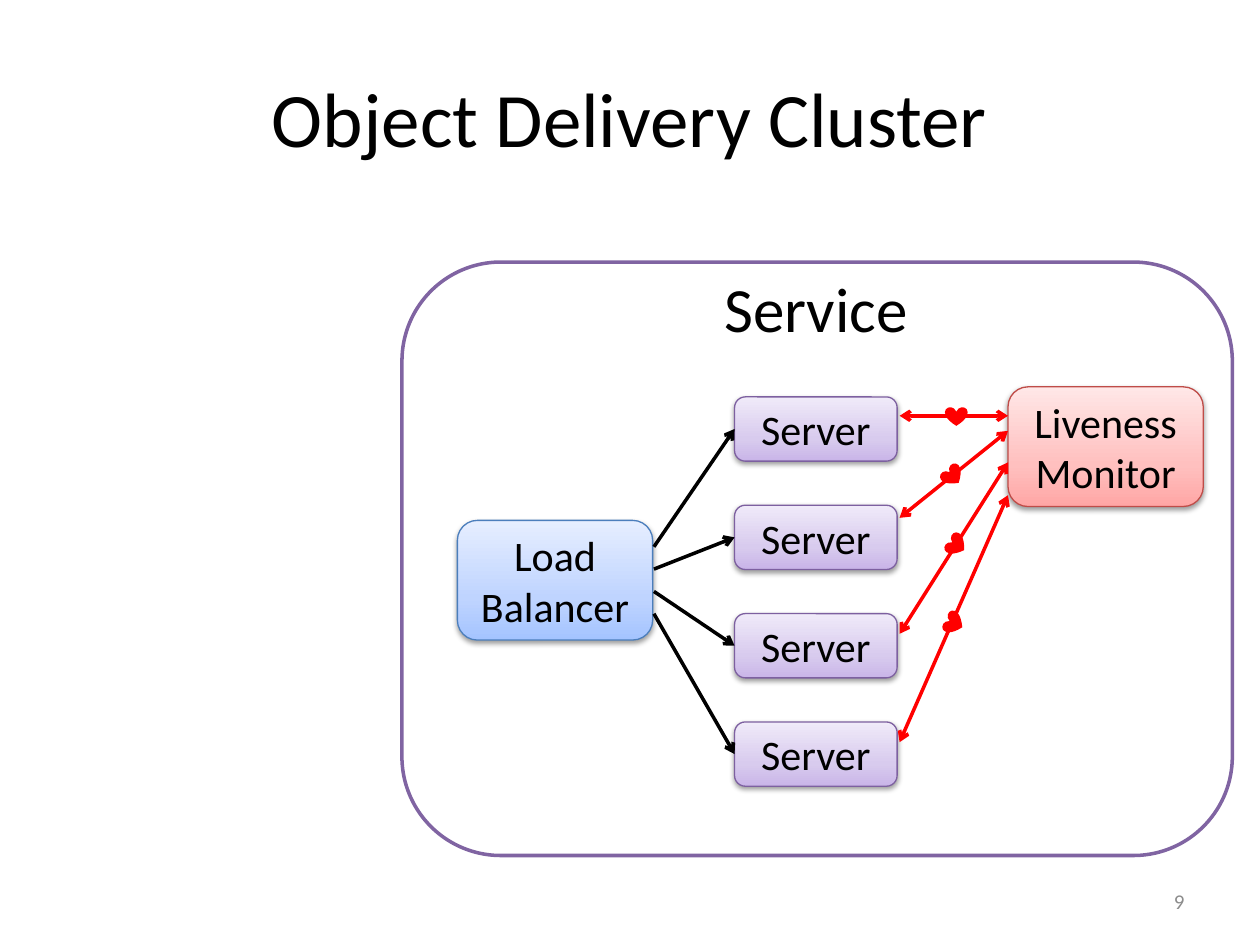
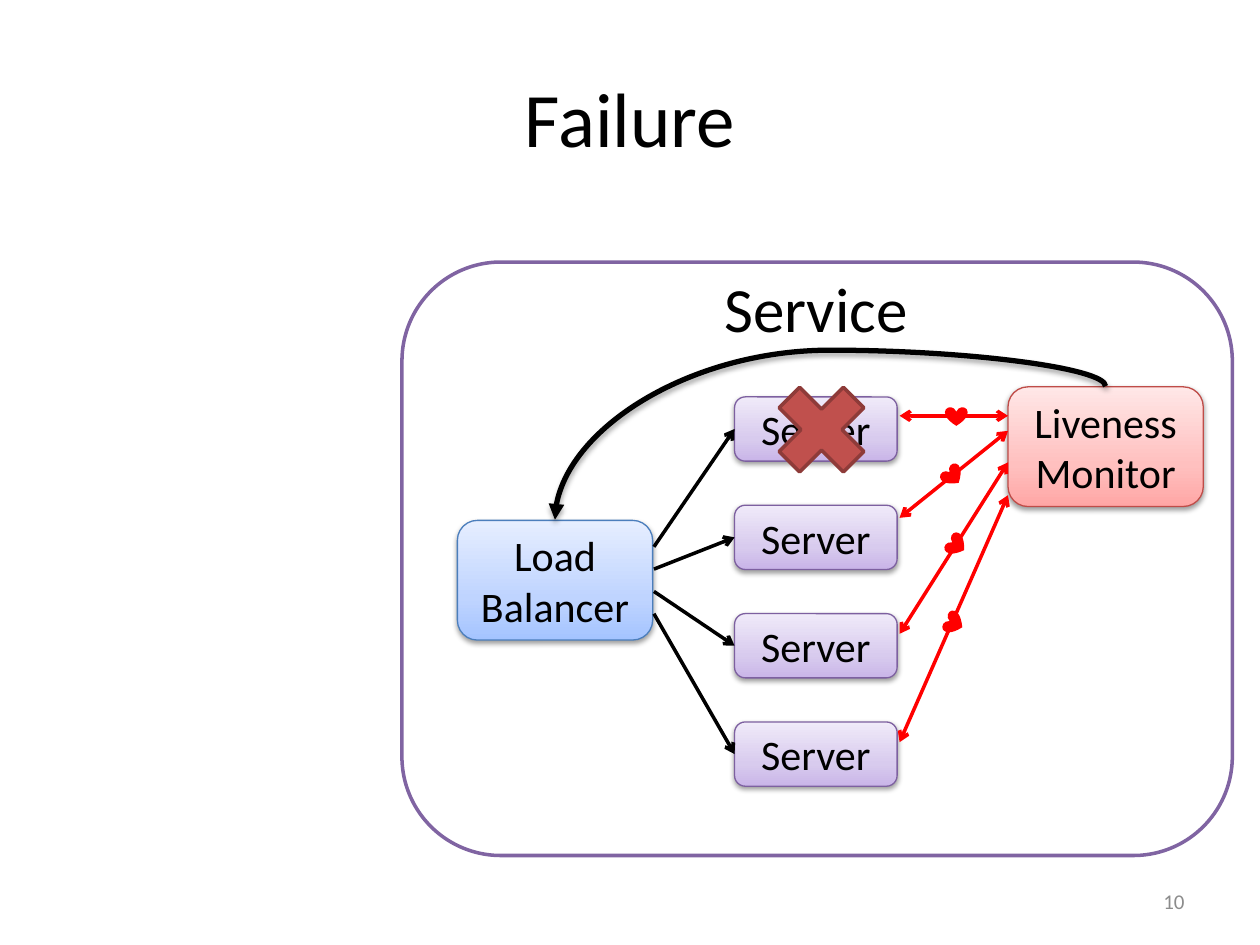
from lxml import etree
from pptx import Presentation
from pptx.dml.color import RGBColor
from pptx.enum import shapes, text
from pptx.oxml.ns import qn
from pptx.util import Inches, Pt

FONT = "Calibri"
COLORS = {
    "text": "000000",
    "number": "8C8C8C",
    "frame": "8064A2",
    "heartbeat": "FF0000",
    "cross": "C0504D",
    "cross_line": "8E3B39",
}
# Outline, then gradient from bottom to top
SERVER_STYLE = ("7D60A0", ("C9B5E8", "D8CBEE", "F0EAF9"))
MONITOR_STYLE = ("BF4C48", ("FFA6A5", "FFC0BF", "FFE7E7"))
BALANCER_STYLE = ("4B7EBC", ("A4C4FF", "BFD4FF", "E6EEFF"))
GRADIENT_STOPS = (0, 35, 100)

SERVER_COUNT = 4
SERVER_TOP, SERVER_PITCH = 3.15, 0.86
BALANCER_PORT_TOP, BALANCER_PORT_PITCH = 4.34, 0.177
# Server end, monitor end, heart left, heart top, heart rotation
HEARTBEATS = (
    (3.30, 3.30, 7.50, 3.23, 0),
    (4.11, 3.42, 7.47, 3.70, 319.2),
    (5.03, 3.67, 7.50, 4.25, 303.1),
    (5.89, 3.93, 7.48, 4.87, 295.9),
)


def color(name):
    return RGBColor.from_string(COLORS.get(name, name))


def inches(*lengths):
    return [Inches(length) for length in lengths]


def child(parent, tag, **attributes):
    values = {key: str(value) for key, value in attributes.items()}
    return etree.SubElement(parent, qn(tag), values)


def write(box, words, size, align, name="text"):
    para = box.text_frame.paragraphs[0]
    para.alignment = align
    span = para.add_run()
    span.text = words
    span.font.name = FONT
    span.font.size = Pt(size)
    span.font.color.rgb = color(name)


def add_shadow(effects, opacity, distance):
    shadow = child(effects, "a:outerShdw", blurRad=Pt(3.1), dist=Pt(distance),
                   dir=5400000, rotWithShape=0)
    black = child(shadow, "a:srgbClr", val=COLORS["text"])
    child(black, "a:alpha", val=opacity * 1000)


def add_preset(page, kind, area, fill=None, line=None, width=2):
    shape = page.shapes.add_shape(kind, *inches(*area))
    shape.shadow.inherit = False
    if fill:
        shape.fill.solid()
        shape.fill.fore_color.rgb = color(fill)
    else:
        shape.fill.background()
    if line:
        shape.line.color.rgb = color(line)
        shape.line.width = Pt(width)
    else:
        shape.line.fill.background()
    return shape


def add_node(page, words, area, style):
    outline, gradient = style
    node = add_preset(page, shapes.MSO_SHAPE.ROUNDED_RECTANGLE, area,
                      line=outline, width=0.75)
    node.fill.gradient()
    node.fill.gradient_angle = 90
    properties = node._element.spPr
    stops = properties.find(".//" + qn("a:gsLst"))
    for stop in list(stops):
        stops.remove(stop)
    for position, tint in zip(GRADIENT_STOPS, gradient):
        stop = child(stops, "a:gs", pos=position * 1000)
        child(stop, "a:srgbClr", val=tint)
    add_shadow(properties.find(qn("a:effectLst")), 38, 1.6)
    node.text_frame.word_wrap = True
    node.text_frame.vertical_anchor = text.MSO_ANCHOR.MIDDLE
    write(node, words, 24, text.PP_ALIGN.CENTER)
    return node


def add_arrow(page, start, end, name="text", width=2, head=None, tail="arrow",
              kind=shapes.MSO_CONNECTOR.STRAIGHT):
    arrow = page.shapes.add_connector(kind, *inches(*start, *end))
    arrow.line.color.rgb = color(name)
    arrow.line.width = Pt(width)
    line = arrow.line._ln
    if head:
        child(line, "a:headEnd", type=head)
    child(line, "a:tailEnd", type=tail)
    child(arrow._element.spPr, "a:effectLst")
    return arrow


def add_heartbeats(page):
    for server_y, monitor_y, left, top, rotation in HEARTBEATS:
        add_arrow(page, (7.14, server_y), (8, monitor_y), "heartbeat",
                  head="arrow")
        heart = add_preset(page, shapes.MSO_SHAPE.HEART,
                           (left, top, 0.18, 0.15), "heartbeat")
        heart.rotation = rotation


def add_cluster(page):
    # Service frame and its label
    add_preset(page, shapes.MSO_SHAPE.ROUNDED_RECTANGLE,
               (3.19, 2.08, 6.59, 4.71), line="frame")
    label = page.shapes.add_textbox(*inches(5.65, 2.09, 1.66, 0.71))
    label.text_frame.word_wrap = False
    label.text_frame.auto_size = text.MSO_AUTO_SIZE.SHAPE_TO_FIT_TEXT
    write(label, "Service", 36, text.PP_ALIGN.LEFT)

    # Nodes
    monitor = add_node(page, "Liveness Monitor", (8, 3.07, 1.55, 0.95),
                       MONITOR_STYLE)
    balancer = add_node(page, "Load Balancer", (3.63, 4.13, 1.55, 0.95),
                        BALANCER_STYLE)
    for row in range(SERVER_COUNT):
        top = SERVER_TOP + row * SERVER_PITCH
        server = add_node(page, "Server", (5.83, top, 1.29, 0.51),
                          SERVER_STYLE)
        port = BALANCER_PORT_TOP + row * BALANCER_PORT_PITCH
        request = add_arrow(page, (5.19, port), (5.83, top + 0.26))
        request.end_connect(server, 1)

    add_heartbeats(page)
    return monitor, balancer


def add_failure(page, monitor, balancer):
    # Cross over the first server
    add_preset(page, shapes.MSO_SHAPE.MATH_MULTIPLY,
               (6.03, 2.92, 0.98, 0.98), "cross", "cross_line")

    # Curved notice from the monitor to the balancer
    notice = add_arrow(page, (8.78, 3.07), (4.41, 4.13), width=3,
                       tail="triangle", kind=shapes.MSO_CONNECTOR.CURVE)
    notice.begin_connect(monitor, 0)
    notice.end_connect(balancer, 0)
    notice.left, notice.top, notice.width, notice.height = inches(
        6.06, 1.41, 1.06, 4.37)
    properties = notice._element.spPr
    frame = properties.find(qn("a:xfrm"))
    for key, value in (("rot", "16200000"), ("flipH", "1"), ("flipV", "1")):
        frame.set(key, value)
    guides = properties.find(qn("a:prstGeom")).find(qn("a:avLst"))
    child(guides, "a:gd", name="adj1", fmla="val -27000")
    add_shadow(properties.find(qn("a:effectLst")), 35, 1.8)


def add_page(deck, title, number):
    page = deck.slides.add_slide(deck.slide_layouts[5])
    box = page.shapes.title
    box.left, box.top, box.width, box.height = inches(0.5, 0.3, 9, 1.25)
    box.text_frame.vertical_anchor = text.MSO_ANCHOR.MIDDLE
    write(box, title, 44, text.PP_ALIGN.CENTER)

    footer = page.shapes.add_textbox(*inches(7.17, 6.95, 2.33, 0.4))
    footer.text_frame.word_wrap = True
    footer.text_frame.vertical_anchor = text.MSO_ANCHOR.MIDDLE
    write(footer, str(number), 12, text.PP_ALIGN.RIGHT, "number")
    return page


def main():
    deck = Presentation()
    deck.slide_width, deck.slide_height = inches(10, 7.5)

    # Healthy cluster
    add_cluster(add_page(deck, "Object Delivery Cluster", 9))

    # Cluster with a failed server
    page = add_page(deck, "Failure", 10)
    monitor, balancer = add_cluster(page)
    add_failure(page, monitor, balancer)

    deck.save("out.pptx")


if __name__ == "__main__":
    main()
